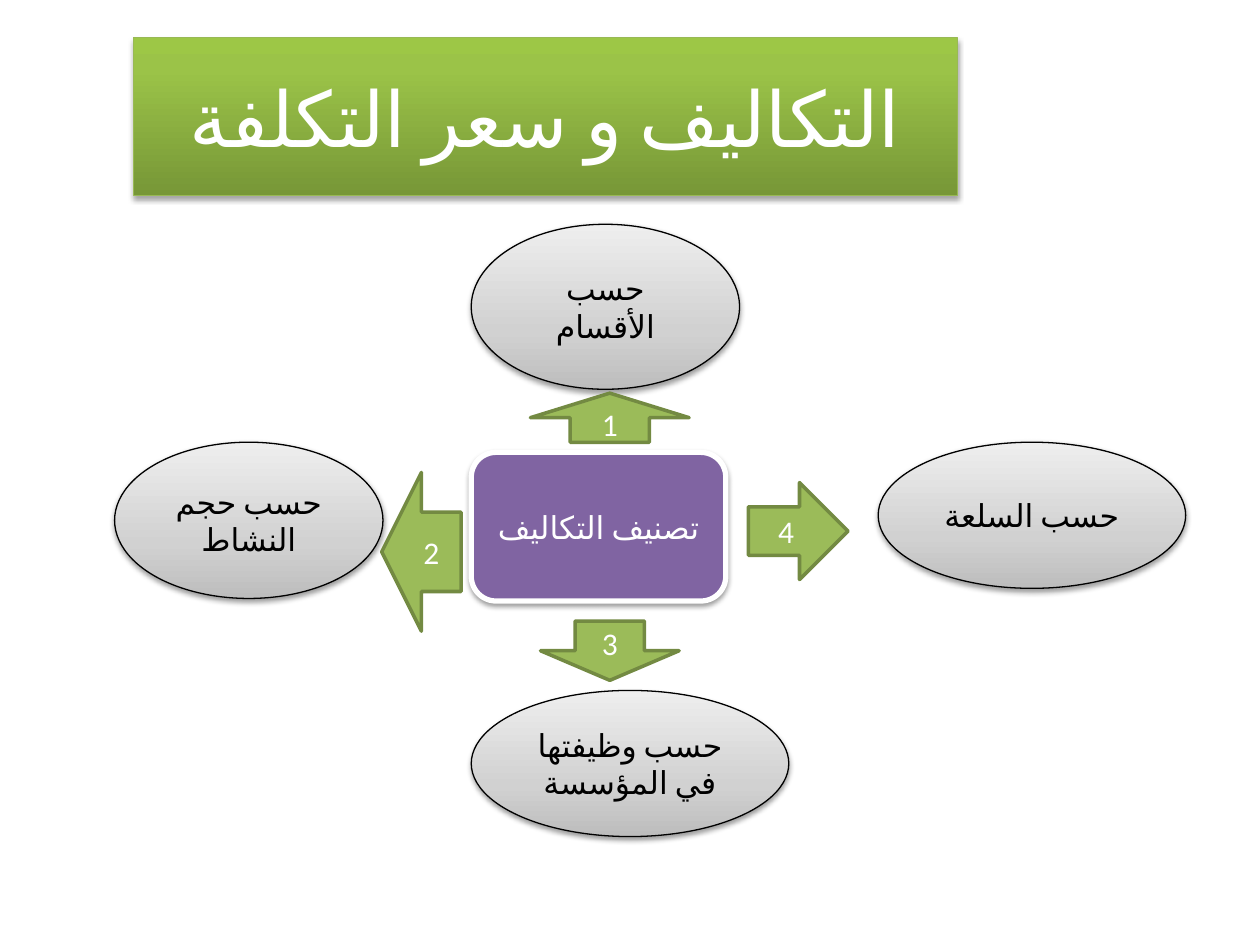
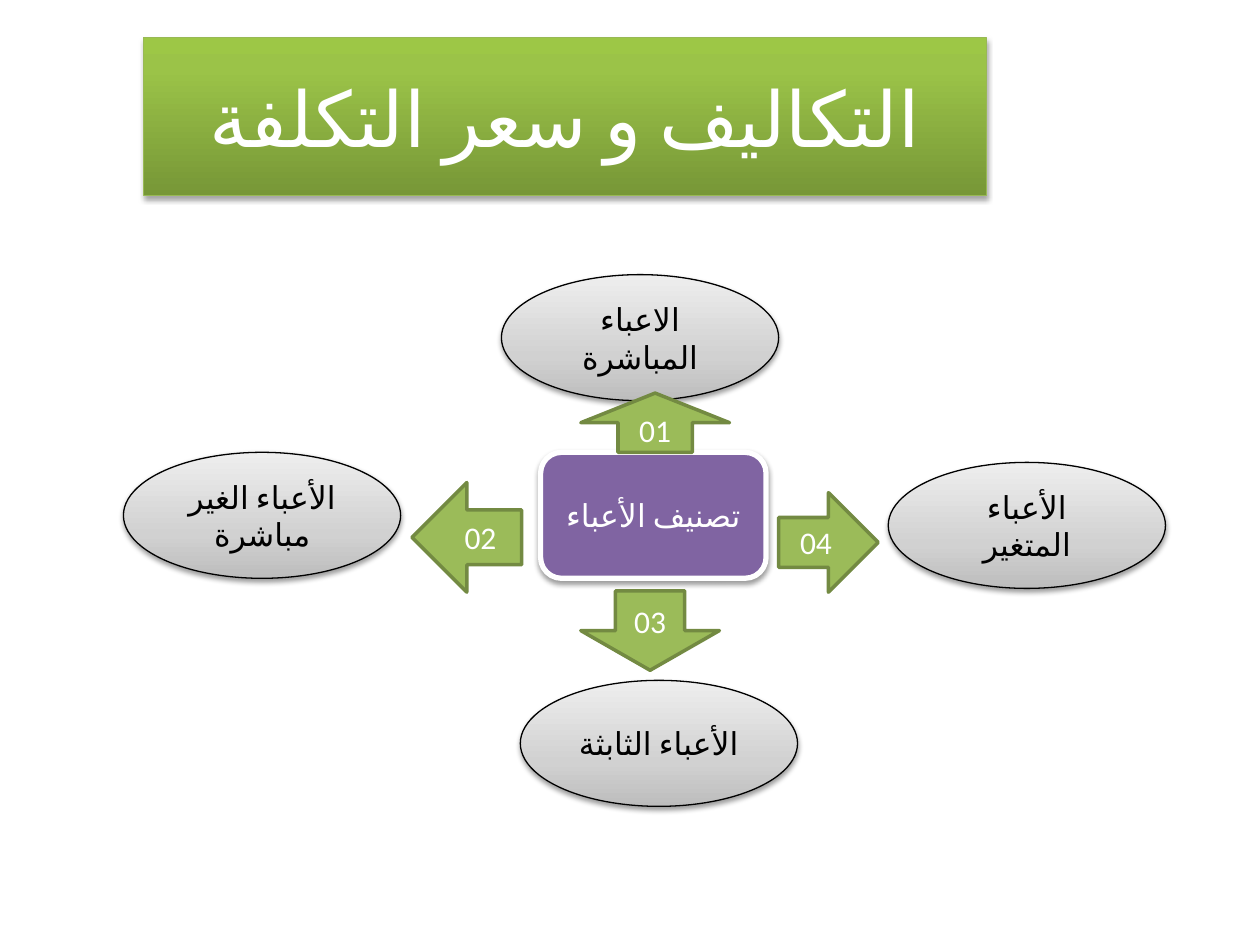
from dataclasses import dataclass

from lxml import etree
from pptx import Presentation
from pptx.dml.color import RGBColor
from pptx.enum.shapes import MSO_SHAPE
from pptx.enum.text import MSO_ANCHOR, PP_ALIGN
from pptx.oxml.ns import qn
from pptx.util import Inches, Pt

ELLIPSE = MSO_SHAPE.OVAL
ROUNDED = MSO_SHAPE.ROUNDED_RECTANGLE
ARROWS = {
    "up": MSO_SHAPE.UP_ARROW,
    "left": MSO_SHAPE.LEFT_ARROW,
    "down": MSO_SHAPE.DOWN_ARROW,
    "right": MSO_SHAPE.RIGHT_ARROW,
}
CENTER = PP_ALIGN.CENTER
MIDDLE = MSO_ANCHOR.MIDDLE
TITLE_ONLY = 5


@dataclass(frozen=True)
class Theme:
    font: str = "Calibri"
    language: str = "ar-DZ"
    title_size: int = 44
    text_size: int = 18
    white: str = "FFFFFF"
    black: str = "000000"
    purple: str = "8064A2"
    green: str = "9BBB59"
    arrow_line: str = "738A42"
    title_line: str = "98B955"
    # Gradient stops run from the bottom edge to the top edge
    title_stops: tuple = ((0, "779737"), (80, "9BC348"), (100, "9DC746"))
    gray_stops: tuple = ((0, "BDBDBD"), (35, "D1D1D1"), (100, "EEEEEE"))
    # Opacity in percent, distance in points
    title_shadow: tuple = (35, 1.8)
    shape_shadow: tuple = (38, 1.6)
    shadow_blur: float = 3.1


THEME = Theme()
TITLE = "التكاليف و سعر التكلفة"

# Each branch: label, ellipse box, arrow number, arrow box
SLIDES = [
    {
        "title_box": (1.06, 0.3, 6.54, 1.25),
        "center": ("تصنيف التكاليف", (3.74, 3.59, 2.02, 1.18)),
        "branches": {
            "up": ("حسب الأقسام", (3.74, 1.78, 2.13, 1.31),
                   "1", (4.21, 3.12, 1.26, 0.39)),
            "left": ("حسب حجم النشاط", (0.91, 3.51, 2.13, 1.24),
                     "2", (3.03, 3.75, 0.63, 1.26)),
            "down": ("حسب وظيفتها في المؤسسة", (3.74, 5.48, 2.52, 1.16),
                     "3", (4.29, 4.93, 1.1, 0.47)),
            "right": ("حسب السلعة", (6.97, 3.51, 2.44, 1.16),
                      "4", (5.94, 3.83, 0.79, 0.77)),
        },
    },
    {
        "title_box": (1.14, 0.3, 6.69, 1.25),
        "center": ("تصنيف الأعباء", (4.29, 3.59, 1.79, 1)),
        "branches": {
            "up": ("الاعباء المباشرة", (3.98, 2.18, 2.2, 1),
                   "01", (4.61, 3.12, 1.18, 0.47)),
            "left": ("الأعباء الغير مباشرة", (0.98, 3.59, 2.2, 1),
                     "02", (3.27, 3.83, 0.87, 0.87)),
            "down": ("الأعباء الثابثة", (4.13, 5.4, 2.2, 1),
                     "03", (4.61, 4.69, 1.1, 0.63)),
            "right": ("الأعباء المتغير", (7.05, 3.67, 2.2, 1),
                      "04", (6.18, 3.91, 0.79, 0.79)),
        },
    },
]


def rgb(color):
    return RGBColor.from_string(color)


def set_gradient(s, stops):
    s.fill.gradient()
    s.fill.gradient_angle = 90
    stop_list = s.element.spPr.find(qn("a:gradFill")).find(qn("a:gsLst"))
    for old in list(stop_list):
        stop_list.remove(old)
    for position, color in stops:
        stop = etree.SubElement(stop_list, qn("a:gs"), pos=str(position * 1000))
        etree.SubElement(stop, qn("a:srgbClr"), val=color)


def set_shadow(s, opacity, distance):
    effects = s.element.spPr.find(qn("a:effectLst"))
    shadow = etree.SubElement(
        effects, qn("a:outerShdw"), blurRad=str(Pt(THEME.shadow_blur)),
        dist=str(Pt(distance)), dir="5400000", rotWithShape="0")
    color = etree.SubElement(shadow, qn("a:srgbClr"), val=THEME.black)
    etree.SubElement(color, qn("a:alpha"), val=str(opacity * 1000))


def style_shape(s, fill, line, line_width, shadow=None):
    """Fill is one colour or a tuple of gradient stops."""
    if isinstance(fill, tuple):
        set_gradient(s, fill)
    else:
        s.fill.solid()
        s.fill.fore_color.rgb = rgb(fill)
    s.line.color.rgb = rgb(line)
    s.line.width = Pt(line_width)
    s.shadow.inherit = False
    if shadow:
        set_shadow(s, *shadow)


def set_arabic(p, r):
    """Right-to-left paragraph, Arabic language and complex-script font."""
    p._p.get_or_add_pPr().set("rtl", "1")
    run_format = r._r.get_or_add_rPr()
    run_format.set("lang", THEME.language)
    etree.SubElement(run_format, qn("a:cs"), typeface=THEME.font)


def write_text(s, text, color, size=THEME.text_size, arabic=True):
    tf = s.text_frame
    tf.word_wrap = True
    tf.vertical_anchor = MIDDLE
    p = tf.paragraphs[0]
    p.alignment = CENTER
    r = p.add_run()
    r.text = text
    for name, value in {"name": THEME.font, "size": Pt(size)}.items():
        setattr(r.font, name, value)
    r.font.color.rgb = rgb(color)
    if arabic:
        set_arabic(p, r)


def add_box(slide, kind, box):
    return slide.shapes.add_shape(kind, *map(Inches, box))


def add_title(slide, box):
    s = slide.shapes.title
    for name, value in zip(("left", "top", "width", "height"), box):
        setattr(s, name, Inches(value))
    style_shape(s, THEME.title_stops, THEME.title_line, 0.75, THEME.title_shadow)
    write_text(s, TITLE, THEME.white, THEME.title_size)


def add_center(slide, text, box):
    s = add_box(slide, ROUNDED, box)
    style_shape(s, THEME.purple, THEME.white, 3, THEME.shape_shadow)
    write_text(s, text, THEME.white)


def add_ellipse(slide, text, box):
    s = add_box(slide, ELLIPSE, box)
    style_shape(s, THEME.gray_stops, THEME.black, 0.75, THEME.shape_shadow)
    write_text(s, text, THEME.black)


def add_arrow(slide, direction, number, box):
    s = add_box(slide, ARROWS[direction], box)
    style_shape(s, THEME.green, THEME.arrow_line, 2)
    write_text(s, number, THEME.white, arabic=False)


def add_diagram(prs, content):
    slide = prs.slides.add_slide(prs.slide_layouts[TITLE_ONLY])
    add_title(slide, content["title_box"])
    add_center(slide, *content["center"])
    branches = content["branches"]
    # Ellipses lie behind the arrows
    for label, box, _, _ in branches.values():
        add_ellipse(slide, label, box)
    for direction, (_, _, number, box) in branches.items():
        add_arrow(slide, direction, number, box)


def main():
    prs = Presentation()
    prs.slide_width, prs.slide_height = Inches(10), Inches(7.5)
    for content in SLIDES:
        add_diagram(prs, content)
    prs.save("out.pptx")


if __name__ == "__main__":
    main()
